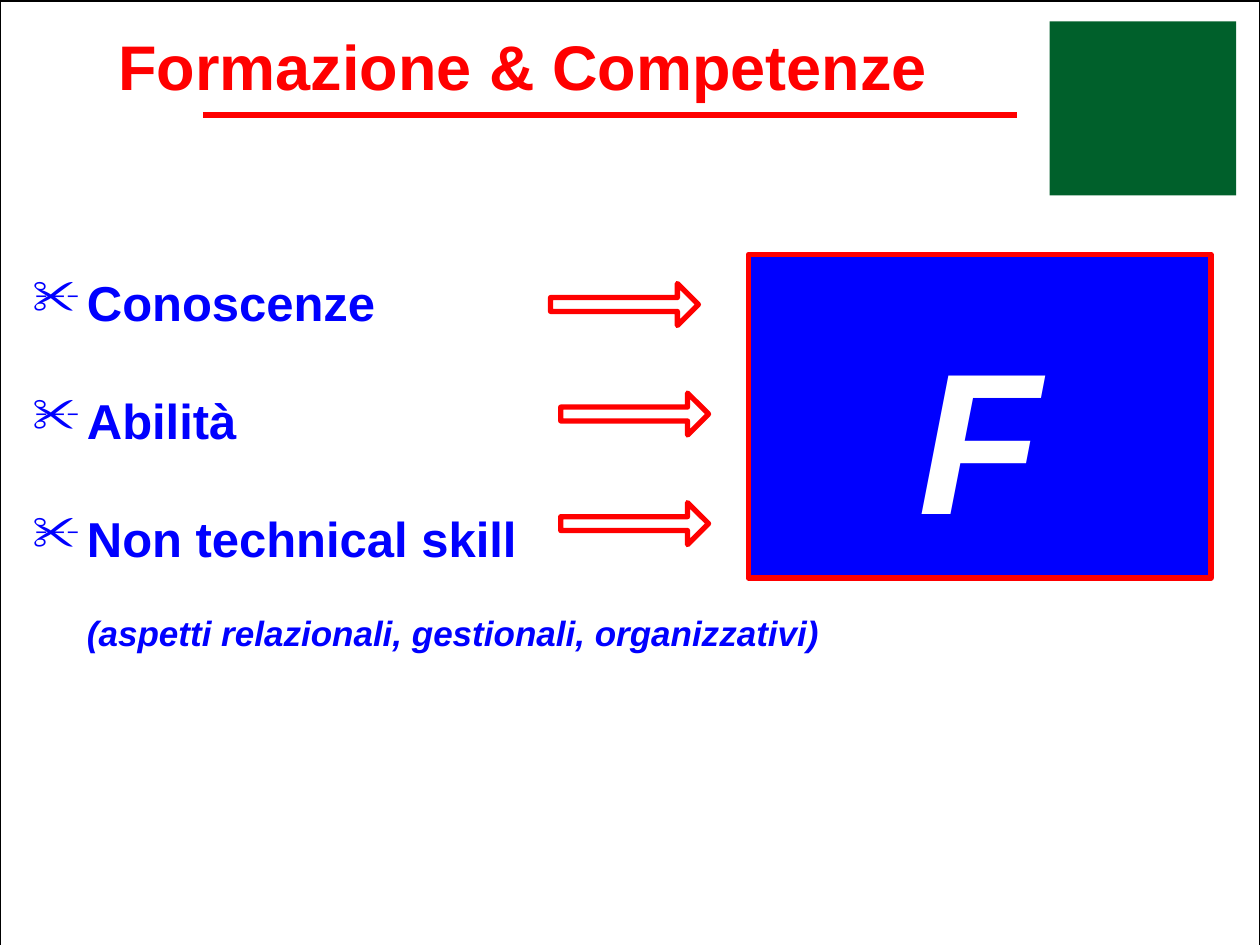
from pptx import Presentation
from pptx.dml.color import RGBColor
from pptx.enum.shapes import MSO_CONNECTOR, MSO_SHAPE as Shape
from pptx.enum.text import MSO_ANCHOR as Anchor, PP_ALIGN as Align
from pptx.oxml.xmlchemy import OxmlElement
from pptx.util import Pt

COLORS = {name: RGBColor.from_string(value) for name, value in {
    "white": "FFFFFF", "black": "000000", "red": "FF0000",
    "blue": "0000FF", "green": "00602B"}.items()}
INSET = Pt(4.3)

deck = Presentation()
deck.slide_width, deck.slide_height = Pt(720), Pt(540)
page = deck.slides.add_slide(deck.slide_layouts[6])


def add_block(kind, left, top, width, height, fill=None, line=None, weight=3):
    """Add a preset shape; without fill or line that part stays empty."""
    block = page.shapes.add_shape(kind, Pt(left), Pt(top), Pt(width), Pt(height))
    block.shadow.inherit = False
    if fill:
        block.fill.solid()
        block.fill.fore_color.rgb = COLORS[fill]
    else:
        block.fill.background()
    if line:
        block.line.color.rgb = COLORS[line]
        block.line.width = Pt(weight)
        block.line._get_or_add_ln().append(OxmlElement("a:round"))
    else:
        block.line.fill.background()
    return block


def style_text(paragraph, size, color, italic=False):
    for span in paragraph.runs:
        span.font.name = "Arial"
        span.font.size = Pt(size)
        span.font.bold = True
        span.font.italic = italic
        span.font.color.rgb = COLORS[color]


add_block(Shape.RECTANGLE, 0, 0.7, 720, 540, "white", "black", 1)

# Title and its underline
title = page.shapes.add_textbox(Pt(-25.2), Pt(9.4), Pt(648), Pt(56)).text_frame
title.word_wrap = True
title.vertical_anchor = Anchor.MIDDLE
title.text = "Formazione & Competenze"
title.paragraphs[0].alignment = Align.CENTER
style_text(title.paragraphs[0], 36, "red")

underline = page.shapes.add_connector(
    MSO_CONNECTOR.STRAIGHT, Pt(116), Pt(65.7), Pt(581), Pt(65.7))
underline.line.color.rgb = COLORS["red"]
underline.line.width = Pt(3)
underline._element.spPr.append(OxmlElement("a:effectLst"))

# Skills with scissors bullets, then an indented remark
skills = page.shapes.add_textbox(Pt(14.4), Pt(151.2), Pt(606), Pt(232)).text_frame
skills.word_wrap = True
skills.margin_left = skills.margin_right = INSET
skills.margin_top = skills.margin_bottom = INSET
skills.text = "\n".join([
    "Conoscenze", "Abilità", "Non technical skill",
    "(aspetti relazionali, gestionali, organizzativi)"])
*bulleted, remark = skills.paragraphs
for index, paragraph in enumerate(bulleted):
    properties = paragraph._p.get_or_add_pPr()
    properties.set("marL", str(Pt(31)))
    properties.set("indent", str(Pt(-31)))
    bullet = OxmlElement("a:buChar")
    bullet.set("char", "✂")
    properties.append(bullet)
    if index:
        paragraph.space_before = Pt(34)
    style_text(paragraph, 28, "blue")
remark._p.get_or_add_pPr().set("marL", str(Pt(31)))
remark.space_before = Pt(25)
style_text(remark, 20, "blue", italic=True)

# Arrows towards the result box
for index, left in enumerate([314.6, 320.4, 320.4]):
    arrow = add_block(Shape.RIGHT_ARROW, left, 162 + 62.6 * index, 84.5, 24, line="red")
    arrow.adjustments[0] = 0.33

result = add_block(Shape.RECTANGLE, 427.7, 145.4, 264.3, 185, "blue", "red")
letter = result.text_frame
letter.vertical_anchor = Anchor.MIDDLE
letter.margin_left = letter.margin_right = letter.margin_bottom = INSET
letter.margin_top = Pt(25)
letter.text = "F"
letter.paragraphs[0].alignment = Align.CENTER
style_text(letter.paragraphs[0], 115, "white", italic=True)

add_block(Shape.RECTANGLE, 599.8, 12.2, 106.6, 99.4, "green")

deck.save("out.pptx")
